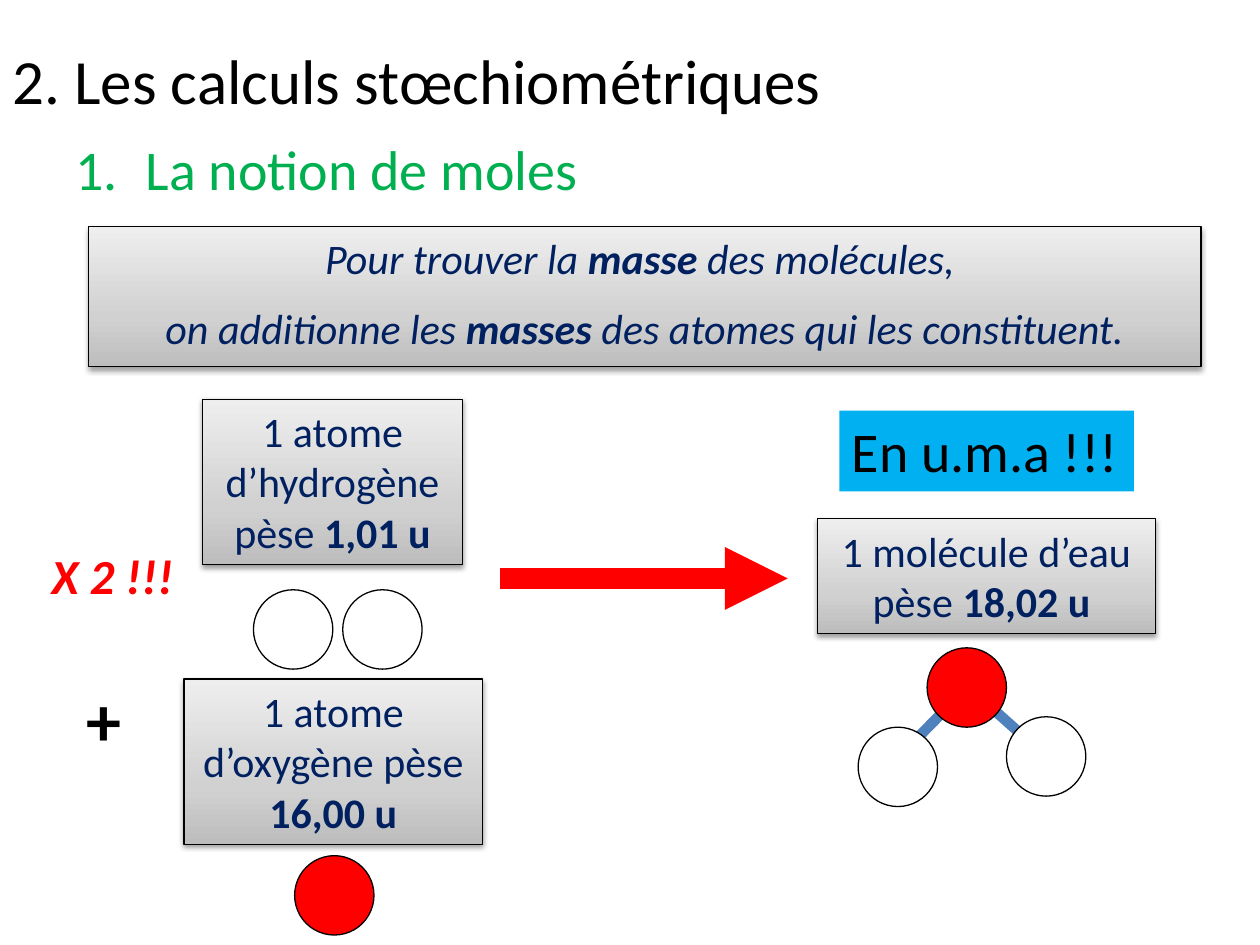
from lxml import etree
from pptx import Presentation, util as u
from pptx.dml.color import RGBColor
from pptx.enum import shapes, text
from pptx.oxml.ns import qn

# Positions are (left, top, width, height) in cm; "*" marks bold runs.
HEADINGS = [
    ("2. Les calculs stœchiométriques", (0, 0, 22.86, 3.18), "title", "ink"),
    ("La notion de moles", (1.27, 2.59, 22.86, 1.8), "subtitle", "green"),
]
PANELS = [
    (["Pour trouver la *masse *des molécules, ",
      "on additionne les *masses* des atomes qui les constituent."],
     (1.78, 4.57, 22.43, 2.82), True),
    (["1 atome d’hydrogène pèse *1,01 u*"], (4.09, 8.05, 5.23, 3.33), False),
    (["1 atome d’oxygène pèse *16,00 u*"], (3.71, 13.69, 6.02, 3.33), False),
    (["1 molécule d’eau pèse *18,02 u* "], (16.48, 10.46, 6.81, 2.31), False),
]
NOTES = [
    ("*X 2 !!!*", (0.79, 10.87, 3.61, 1.45), "factor", "red", True),
    ("*+*", (1.5, 13.51, 2.21, 1.96), "plus", "ink", False),
]
UNIT = ("En u.m.a !!!", (16.92, 8.28, 5.94, 1.63))
ATOM_SIZE = 1.6
ATOMS = [  # left, top, colour
    (5.11, 11.89, "white"), (6.91, 11.89, "white"), (5.94, 17.25, "red"),
    (18.69, 13.06, "red"), (17.3, 14.66, "white"), (20.29, 14.45, "white"),
]
BONDS = [((19.51, 13.84), (18.11, 15.27)), ((19.51, 13.84), (21.11, 15.27))]
ARROW = ((10.08, 11.66), (15.88, 11.66))


class Theme:
    font = "Calibri"
    colors = dict(ink="000000", white="FFFFFF", green="00B050", navy="002060",
                  red="FF0000", sky="00B0F0", bond="4F81BD")
    sizes = dict(title=36, subtitle=32, body=24, factor=28, plus=40, unit=32)
    panel_stops = [(0, "BDBDBD"), (35, "D1D1D1"), (100, "EEEEEE")]
    outline, bond, arrow = 0.75, 6, 12
    paragraph_gap = 11


def rgb(name):
    return RGBColor.from_string(Theme.colors[name])


def cm(*values):
    return [u.Cm(v) for v in values]


def add(parent, tag, **attrs):
    return etree.SubElement(parent, qn(tag), {k: str(v) for k, v in attrs.items()})


def write(sp, lines, size, color, align=text.PP_ALIGN.LEFT, italic=False,
          anchor=text.MSO_ANCHOR.TOP, wrap=True):
    tf = sp.text_frame
    tf.word_wrap, tf.vertical_anchor = wrap, anchor
    for i, line in enumerate(lines):
        p = tf.paragraphs[0] if i == 0 else tf.add_paragraph()
        p.alignment = align
        p.space_before = u.Pt(Theme.paragraph_gap if i else 0)
        f = p.font
        f.name, f.size, f.italic = Theme.font, u.Pt(Theme.sizes[size]), italic
        f.color.rgb = rgb(color)
        for j, part in enumerate(line.split("*")):
            if part:
                r = p.add_run()
                r.text = part
                if j % 2:
                    r.font.bold = True
    return tf


def number(p):
    """Turn a paragraph into the first item of a numbered list."""
    pPr = p._p.get_or_add_pPr()
    pPr.set("marL", str(u.Cm(1.42)))
    pPr.set("indent", str(u.Cm(-1.42)))
    bullet = etree.Element(qn("a:buAutoNum"), type="arabicPeriod")
    pPr.find(qn("a:spcBef")).addnext(bullet)


def add_shape(s, kind, box, fill=None, outlined=True):
    sp = s.shapes.add_shape(kind, *cm(*box))
    sp.shadow.inherit = False
    if fill:
        sp.fill.solid()
        sp.fill.fore_color.rgb = rgb(fill)
    if outlined:
        sp.line.color.rgb = rgb("ink")
        sp.line.width = u.Pt(Theme.outline)
    else:
        sp.line.fill.background()
    return sp


def add_panel(s, lines, box, italic):
    sp = add_shape(s, shapes.MSO_SHAPE.RECTANGLE, box)
    sp.fill.gradient()
    sp.fill.gradient_angle = 90
    spPr = sp._element.spPr
    stops = spPr.find(".//" + qn("a:gsLst"))
    for old in list(stops):
        stops.remove(old)
    for pos, color in Theme.panel_stops:
        add(add(stops, "a:gs", pos=pos * 1000), "a:srgbClr", val=color)
    shadow = add(spPr.find(qn("a:effectLst")), "a:outerShdw", blurRad=u.Pt(3.1),
                 dist=u.Pt(1.6), dir=5400000, rotWithShape=0)
    add(add(shadow, "a:srgbClr", val="000000"), "a:alpha", val=38000)
    write(sp, lines, "body", "navy", text.PP_ALIGN.CENTER, italic)


def add_line(s, start, end, color, width):
    c = s.shapes.add_connector(shapes.MSO_CONNECTOR.STRAIGHT, *cm(*start, *end))
    c.line.color.rgb = rgb(color)
    c.line.width = u.Pt(width)
    add(c._element.spPr, "a:effectLst")
    return c


def main():
    prs = Presentation()
    prs.slide_width, prs.slide_height = cm(25.4, 19.05)
    s = prs.slides.add_slide(prs.slide_layouts[6])

    for words, box, size, color in HEADINGS:
        sp = s.shapes.add_textbox(*cm(*box))
        is_title = size == "title"
        anchor = text.MSO_ANCHOR.MIDDLE if is_title else text.MSO_ANCHOR.TOP
        tf = write(sp, [words], size, color, anchor=anchor)
        if not is_title:
            number(tf.paragraphs[0])

    for start, end in BONDS:
        add_line(s, start, end, "bond", Theme.bond)
    arrow = add_line(s, *ARROW, "red", Theme.arrow)
    add(arrow.line._get_or_add_ln(), "a:tailEnd", type="triangle")

    for panel in PANELS:
        add_panel(s, *panel)
    for left, top, color in ATOMS:
        add_shape(s, shapes.MSO_SHAPE.OVAL, (left, top, ATOM_SIZE, ATOM_SIZE), color)
    for words, box, size, color, italic in NOTES:
        write(s.shapes.add_textbox(*cm(*box)), [words], size, color, italic=italic)

    words, box = UNIT
    sp = add_shape(s, shapes.MSO_SHAPE.RECTANGLE, box, "sky", outlined=False)
    write(sp, [words], "unit", "ink", wrap=False)

    prs.save("out.pptx")


if __name__ == "__main__":
    main()
